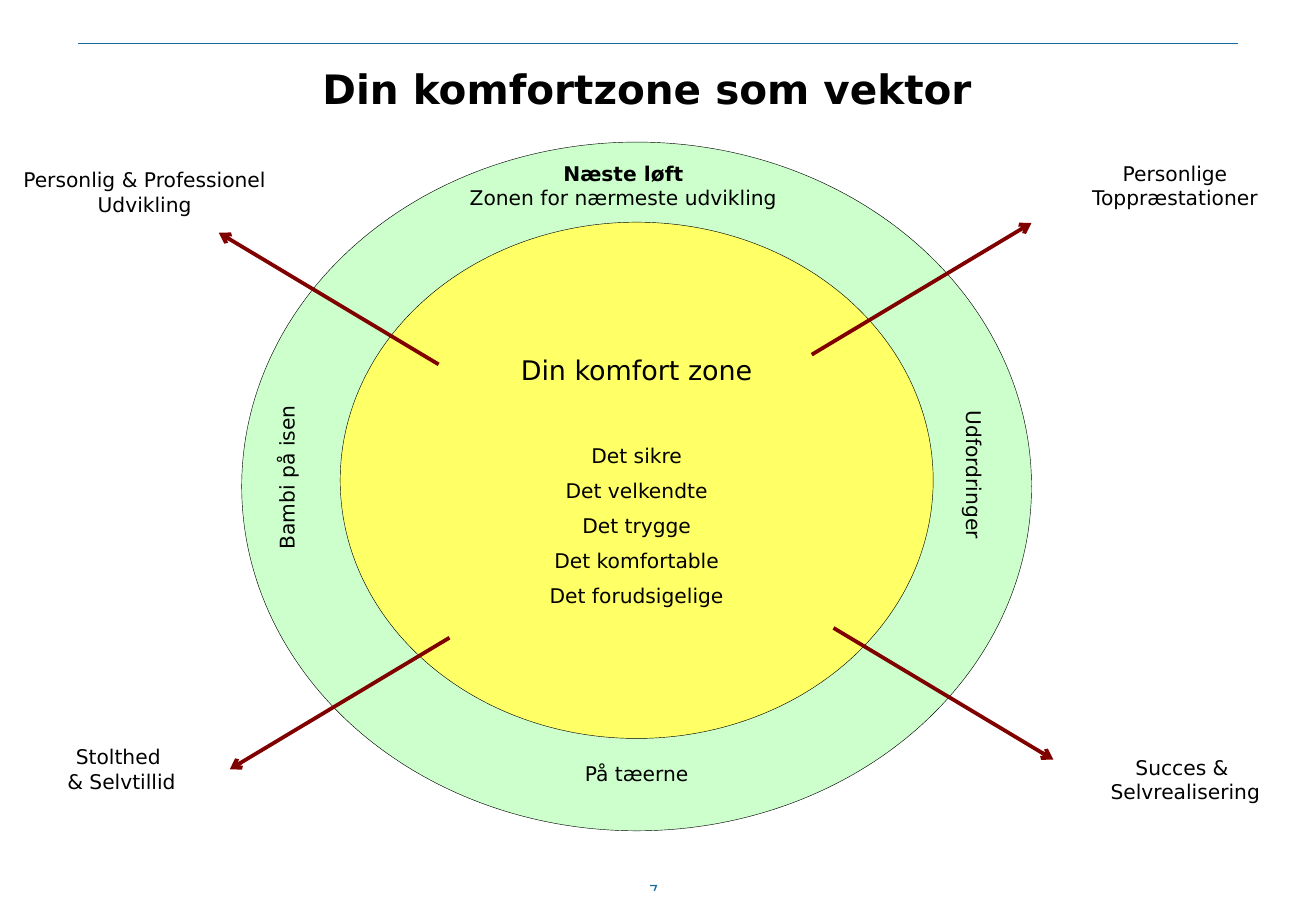
from lxml import etree
from pptx import Presentation
from pptx.dml.color import RGBColor
from pptx.enum import shapes, text
from pptx.oxml import ns
from pptx.util import Inches, Pt

FONT = "DejaVu Sans"
BLACK = RGBColor(0, 0, 0)
WHITE = RGBColor(0xFF, 0xFF, 0xFF)
GREEN = RGBColor(0xCC, 0xFF, 0xCC)
YELLOW = RGBColor(0xFF, 0xFF, 0x66)
MAROON = RGBColor(0x80, 0, 0)
BLUE = RGBColor(0x18, 0x69, 0xA1)

# Places are percentages of the slide: centre x, centre y, width, height.
TITLE = ("Din komfortzone som vektor", (49.17, 9.67, 72.85, 11.33))
PAGE = ("7", (49.68, 97.8, 6.65, 2.8))
RULE = ((94.09, 4.8), (5.91, 4.8))
GREEN_ZONE = (48.38, 53.4, 60.02, 75.6)
YELLOW_ZONE = (48.38, 52.73, 45.06, 56.67)
COMFORT_HEADING = "Din komfort zone"
COMFORT_WORDS = ["Det sikre", "Det velkendte", "Det trygge",
                 "Det komfortable", "Det forudsigelige"]
ROW = 4
TWO_ROWS = 6.67

# Lines, place, rotation
LABELS = [
    (["På tæerne"], (48.38, 84.95, 9.88, ROW), 0),
    (["Udfordringer"], (74.01, 52.13, 11.73, ROW), 90),
    (["Bambi på isen"], (21.79, 52.4, 12.93, ROW), 270),
    (["Næste løft", "Zonen for nærmeste udvikling"], (47.37, 20.4, 25.48, TWO_ROWS), 0),
    (["Personlig & Professionel", "Udvikling"], (10.99, 21.07, 20.5, TWO_ROWS), 0),
    (["Personlige", "Toppræstationer"], (89.29, 20.4, 14.59, TWO_ROWS), 0),
    (["Succes & ", "Selvrealisering"], (90.07, 85.6, 13.39, TWO_ROWS), 0),
    (["Stolthed ", "& Selvtillid"], (9.23, 84.4, 10.16, TWO_ROWS), 0),
]
BOLD_LINES = {"Næste løft"}

# Start of each arrow and its direction; all reach equally far
ARROWS = [((61.68, 38.93), (1, -1)), ((63.34, 68.93), (1, 1)),
          ((33.33, 40), (-1, -1)), ((34.16, 70), (-1, 1))]
REACH = (16.7, 14.45)

prs = Presentation()
prs.slide_width, prs.slide_height = Inches(10.83), Inches(7.5)
slide = prs.slides.add_slide(prs.slide_layouts[5])


def point(x, y):
    return int(prs.slide_width * x / 100), int(prs.slide_height * y / 100)


def box(cx, cy, w, h):
    return point(cx - w / 2, cy - h / 2) + point(w, h)


def write(tf, line, size=12, color=BLACK, bold=False, before=0, first=False):
    """Add one centred line to a text frame."""
    p = tf.paragraphs[0] if first else tf.add_paragraph()
    p.alignment = text.PP_ALIGN.CENTER
    p.space_before = Pt(before)
    r = p.add_run()
    r.text = line
    r.font.name, r.font.size, r.font.bold = FONT, Pt(size), bold
    r.font.color.rgb = color


def set_insets(tf, inches):
    tf.margin_left = tf.margin_right = tf.margin_top = tf.margin_bottom = Inches(inches)


def add_filled(kind, place, fill, outlined=True):
    sp = slide.shapes.add_shape(kind, *box(*place))
    sp.shadow.inherit = False
    sp.fill.solid()
    sp.fill.fore_color.rgb = fill
    if outlined:
        sp.line.color.rgb = BLACK
        sp.line.width = Pt(0.25)
    else:
        sp.line.fill.background()
    return sp


def add_line(start, end, color, width, arrow=False):
    cxn = slide.shapes.add_connector(shapes.MSO_CONNECTOR.STRAIGHT, *point(*start), *point(*end))
    cxn.line.color.rgb = color
    cxn.line.width = Pt(width)
    if arrow:
        etree.SubElement(cxn.line._get_or_add_ln(), ns.qn("a:tailEnd"), type="arrow")
    etree.SubElement(cxn._element.spPr, ns.qn("a:effectLst"))


def add_label(lines, place, rotation=0, **style):
    sp = slide.shapes.add_textbox(*box(*place))
    sp.rotation = rotation
    tf = sp.text_frame
    tf.word_wrap = False
    for i, line in enumerate(lines):
        write(tf, line, bold=line in BOLD_LINES, first=i == 0, **style)
    return tf


# Page furniture
page_tf = add_label([PAGE[0]], PAGE[1], size=9, color=BLUE)
page_tf.vertical_anchor = text.MSO_ANCHOR.BOTTOM
set_insets(page_tf, 0.03)
add_line(*RULE, BLUE, 0.75)
frame = add_filled(shapes.MSO_SHAPE.FRAME, (50, 50, 100, 100), WHITE, outlined=False)
frame.adjustments[0] = 0.022

title = slide.shapes.title
title.left, title.top, title.width, title.height = box(*TITLE[1])
title.text_frame.vertical_anchor = text.MSO_ANCHOR.MIDDLE
write(title.text_frame, TITLE[0], size=24, bold=True, first=True)

# Zones
add_filled(shapes.MSO_SHAPE.OVAL, GREEN_ZONE, GREEN)
comfort_tf = add_filled(shapes.MSO_SHAPE.OVAL, YELLOW_ZONE, YELLOW).text_frame
comfort_tf.vertical_anchor = text.MSO_ANCHOR.MIDDLE
set_insets(comfort_tf, 0.08)
write(comfort_tf, COMFORT_HEADING, size=16, first=True)
for i, word in enumerate(COMFORT_WORDS):
    write(comfort_tf, word, before=6.3 if i else 34)

for (x, y), (right, down) in ARROWS:
    add_line((x, y), (x + right * REACH[0], y + down * REACH[1]), MAROON, 2.25, arrow=True)
for lines, place, rotation in LABELS:
    add_label(lines, place, rotation)

prs.save("out.pptx")
